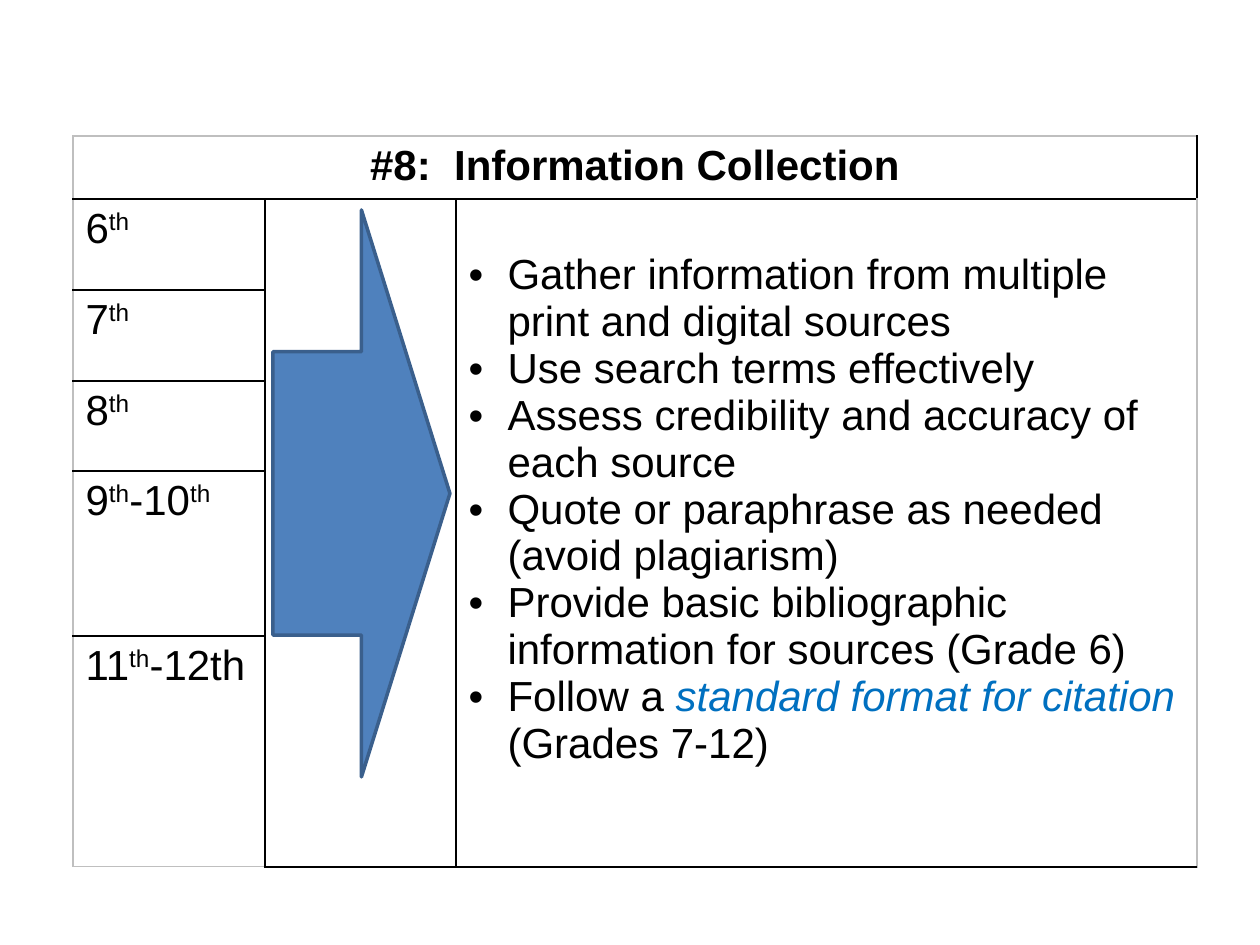
from dataclasses import dataclass

from lxml.etree import SubElement
from pptx import Presentation
from pptx.dml.color import RGBColor
from pptx.enum.shapes import MSO_SHAPE
from pptx.enum.text import PP_ALIGN
from pptx.oxml import parse_xml
from pptx.oxml.ns import nsdecls, qn
from pptx.util import Emu, Pt

SCALE = 914400 / 126


@dataclass(frozen=True)
class Theme:
    font: str = "Arial"
    size: int = 24
    ink: str = "000000"
    cite: str = "0070C0"
    frame: str = "BFBFBF"
    arrow: str = "4F81BD"
    edge: str = "3A5F8C"


@dataclass(frozen=True)
class Part:
    text: str
    sup: bool = False
    cite: bool = False


@dataclass(frozen=True)
class Box:
    left: int
    top: int
    width: int
    height: int


THEME = Theme()
TH = Part("th", sup=True)
COLS = [192, 191, 741]
ROWS = [63, 91, 91, 90, 165, 231]
GRID = Box(73, 136, sum(COLS), sum(ROWS))
ARROW = Box(273, 210, 177, 567)
INDENT = 39

TITLE = [Part("#8:  Information Collection")]
GRADES = [
    [Part("6"), TH],
    [Part("7"), TH],
    [Part("8"), TH],
    [Part("9"), TH, Part("-10"), TH],
    [Part("11"), TH, Part("-12th")],
]
SKILLS = [
    [Part("Gather information from multiple print and digital sources")],
    [Part("Use search terms effectively")],
    [Part("Assess credibility and accuracy of each source")],
    [Part("Quote or paraphrase as needed (avoid plagiarism)")],
    [Part("Provide basic bibliographic information for sources (Grade 6)")],
    [Part("Follow a "), Part("standard format for citation ", cite=True),
     Part("(Grades 7-12)")],
]


def px(n: int) -> Emu:
    return Emu(round(n * SCALE))


def place(box: Box) -> list[Emu]:
    return [px(n) for n in (box.left, box.top, box.width, box.height)]


def rgb(code: str) -> RGBColor:
    return RGBColor.from_string(code)


def write(para, parts: list[Part], bold: bool = False, bullet: bool = False) -> None:
    if bullet:
        props = para._p.get_or_add_pPr()
        props.set("marL", str(px(INDENT)))
        props.set("indent", str(-px(INDENT)))
        SubElement(props, qn("a:buFont")).set("typeface", THEME.font)
        SubElement(props, qn("a:buChar")).set("char", "•")
    font = para.font
    font.name, font.size, font.bold = THEME.font, Pt(THEME.size), bold
    font.color.rgb = rgb(THEME.ink)
    for part in parts:
        run = para.add_run()
        run.text = part.text
        if part.sup:
            run._r.get_or_add_rPr().set("baseline", "30000")
        if part.cite:
            run.font.italic = True
            run.font.color.rgb = rgb(THEME.cite)


def rule(cell, row: int, col: int) -> None:
    """Black inner lines, pale outer frame."""
    outer = {"L": col == 0, "R": col == len(COLS) - 1,
             "T": row == 0, "B": row == len(ROWS) - 1}
    props = cell._tc.get_or_add_tcPr()
    for spot, (side, edge) in enumerate(outer.items()):
        tone, width = (THEME.frame, Pt(0.75)) if edge else (THEME.ink, Pt(1))
        props.insert(spot, parse_xml(
            f'<a:ln{side} {nsdecls("a")} w="{width}"><a:solidFill>'
            f'<a:srgbClr val="{tone}"/></a:solidFill></a:ln{side}>'))


def add_grid(slide):
    grid = slide.shapes.add_table(len(ROWS), len(COLS), *place(GRID)).table
    grid.first_row = grid.horz_banding = False
    for col, width in zip(grid.columns, COLS):
        col.width = px(width)
    for row, height in zip(grid.rows, ROWS):
        row.height = px(height)
    for r in range(len(ROWS)):
        for c in range(len(COLS)):
            cell = grid.cell(r, c)
            cell.fill.background()
            rule(cell, r, c)
    grid.cell(0, 0).merge(grid.cell(0, 2))
    for c in (1, 2):
        grid.cell(1, c).merge(grid.cell(len(ROWS) - 1, c))
    return grid


def add_arrow(slide) -> None:
    shape = slide.shapes.add_shape(MSO_SHAPE.RIGHT_ARROW, *place(ARROW))
    shape.shadow.inherit = False
    shape.fill.solid()
    shape.fill.fore_color.rgb = rgb(THEME.arrow)
    shape.line.color.rgb = rgb(THEME.edge)
    shape.line.width = Pt(2)


def main() -> None:
    deck = Presentation()
    deck.slide_width, deck.slide_height = px(1260), px(945)
    slide = deck.slides.add_slide(deck.slide_layouts[6])

    # Heading row and grades
    grid = add_grid(slide)
    head = grid.cell(0, 0).text_frame.paragraphs[0]
    head.alignment = PP_ALIGN.CENTER
    write(head, TITLE, bold=True)
    for r, grade in enumerate(GRADES, 1):
        write(grid.cell(r, 0).text_frame.paragraphs[0], grade)

    # Skills, set one line down
    cell = grid.cell(1, 2)
    cell.margin_top = px(53)
    frame = cell.text_frame
    for i, skill in enumerate(SKILLS):
        para = frame.add_paragraph() if i else frame.paragraphs[0]
        write(para, skill, bullet=True)

    # Arrow from grades to skills
    add_arrow(slide)
    deck.save("out.pptx")


if __name__ == "__main__":
    main()
